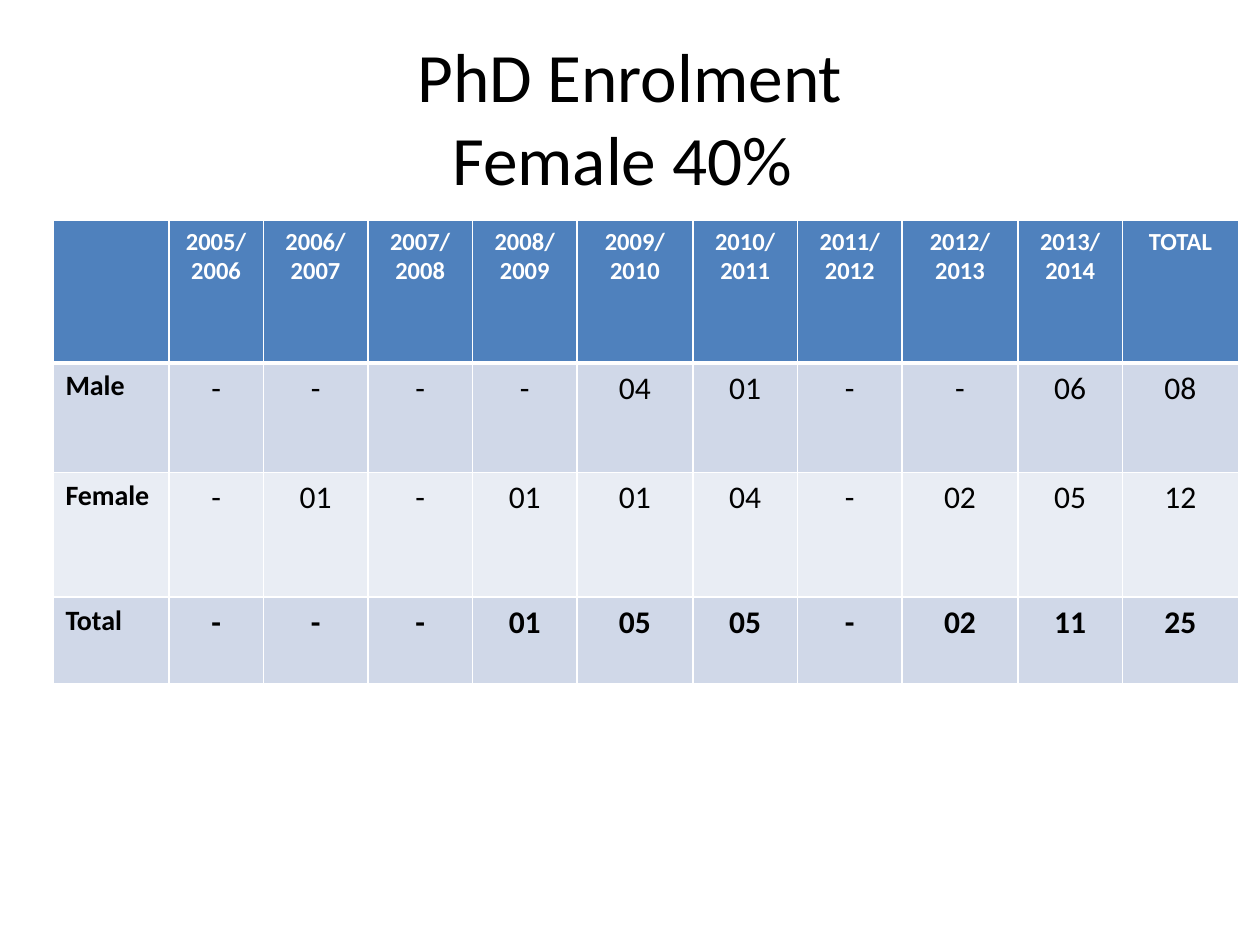
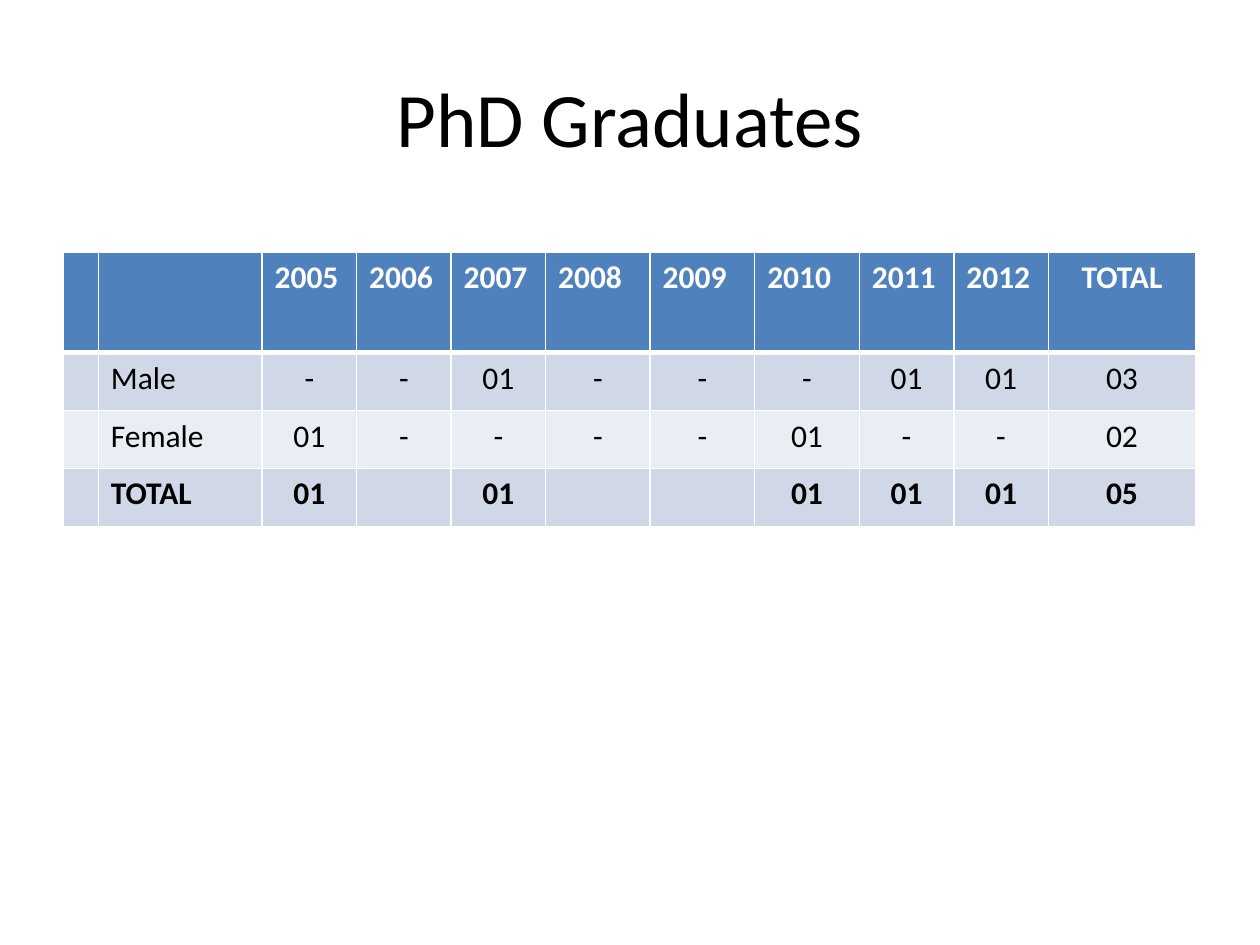
from dataclasses import dataclass

import lxml.etree
import pptx
import pptx.dml.color
import pptx.enum.text
import pptx.oxml.ns
import pptx.util

Inches = pptx.util.Inches
Align = pptx.enum.text.PP_ALIGN

FONT = "Calibri"
BLACK, WHITE = "000000", "FFFFFF"
HEADER_FILL = "4F81BD"
BAND_FILLS = ("D0D8E8", "E9EDF4")
RULE, HEADER_RULE = 1, 3
BODY_SIZE = 18


@dataclass
class StatisticsSlide:
    title: str
    title_size: float
    left: float
    top: float
    column_widths: list[float]
    row_heights: list[float]
    header: list[str]
    rows: list[list[str]]
    label_column: int
    header_size: float
    label_size: float
    bold_labels: bool
    center_years: bool


ENROLMENT = StatisticsSlide(
    title="PhD Enrolment\nFemale 40% ",
    title_size=39.6,
    left=0.42,
    top=1.75,
    column_widths=[0.92, 0.75, 0.83, 0.83, 0.83, 0.92, 0.83, 0.83, 0.92, 0.83, 0.92],
    row_heights=[1.13, 0.87, 0.99, 0.69],
    header=["", *(f"{year}/ {year + 1}" for year in range(2005, 2014)), "TOTAL"],
    rows=[
        ["Male", "-", "-", "-", "-", "04", "01", "-", "-", "06", "08"],
        ["Female", "-", "01", "-", "01", "01", "04", "-", "02", "05", "12"],
        ["Total", "-", "-", "-", "01", "05", "05", "-", "02", "11", "25"],
    ],
    label_column=0,
    header_size=14,
    label_size=16,
    bold_labels=True,
    center_years=True,
)

GRADUATES = StatisticsSlide(
    title="PhD Graduates",
    title_size=44,
    left=0.5,
    top=2,
    column_widths=[0.28, 1.3, 0.75, 0.75, 0.75, 0.83, 0.83, 0.83, 0.75, 0.75, 1.17],
    row_heights=[0.8, 0.46, 0.46, 0.46],
    header=["", "", *(str(year) for year in range(2005, 2013)), "TOTAL"],
    rows=[
        ["", "Male", "-", "-", "01", "-", "-", "-", "01", "01", "03"],
        ["", "Female", "01", "-", "-", "-", "-", "01", "-", "-", "02"],
        ["", "TOTAL", "01", "", "01", "", "", "01", "01", "01", "05"],
    ],
    label_column=1,
    header_size=18,
    label_size=18,
    bold_labels=False,
    center_years=False,
)


def color(value: str) -> pptx.dml.color.RGBColor:
    return pptx.dml.color.RGBColor.from_string(value)


def write(frame, *paragraphs: str, size: float, ink: str = BLACK,
          bold: bool = False, align: Align = Align.CENTER) -> None:
    """Fill a text frame; a newline inside a paragraph is a line break."""
    for index, text in enumerate(paragraphs):
        para = frame.add_paragraph() if index else frame.paragraphs[0]
        para.text = text
        para.alignment = align
        for span in para.runs:
            span.font.name = FONT
            span.font.size = pptx.util.Pt(size)
            span.font.bold = bold
            span.font.color.rgb = color(ink)


def add_title(page, text: str, size: float) -> None:
    box = page.shapes.add_textbox(Inches(0.5), Inches(0.3), Inches(9), Inches(1.25))
    box.text_frame.word_wrap = True
    box.text_frame.vertical_anchor = pptx.enum.text.MSO_ANCHOR.MIDDLE
    write(box.text_frame, text, size=size)


def style_cell(cell, fill: str, top: float, bottom: float) -> None:
    """Give a cell white rules (widths in points) and a solid fill."""
    qualified = pptx.oxml.ns.qn
    properties = cell._tc.get_or_add_tcPr()
    for side, width in {"L": RULE, "R": RULE, "T": top, "B": bottom}.items():
        line = lxml.etree.SubElement(properties, qualified(f"a:ln{side}"),
                                     w=str(pptx.util.Pt(width)))
        solid = lxml.etree.SubElement(line, qualified("a:solidFill"))
        lxml.etree.SubElement(solid, qualified("a:srgbClr"), val=WHITE)
    cell.fill.solid()
    cell.fill.fore_color.rgb = color(fill)


def write_header(cell, content: StatisticsSlide, text: str) -> None:
    centered = content.center_years or text == "TOTAL"
    write(cell.text_frame, *text.split(" "), size=content.header_size, ink=WHITE,
          bold=True, align=Align.CENTER if centered else Align.LEFT)


def write_body(cell, content: StatisticsSlide, text: str,
               is_label: bool, is_total: bool) -> None:
    write(cell.text_frame, text,
          size=content.label_size if is_label else BODY_SIZE,
          bold=is_total or (is_label and content.bold_labels),
          align=Align.LEFT if is_label else Align.CENTER)


def add_statistics_table(page, content: StatisticsSlide) -> None:
    rows = [content.header, *content.rows]
    table = page.shapes.add_table(
        len(rows), len(content.header), Inches(content.left), Inches(content.top),
        Inches(sum(content.column_widths)), Inches(sum(content.row_heights))).table
    table.first_row = table.horz_banding = False
    for column, width in zip(table.columns, content.column_widths):
        column.width = Inches(width)
    for row, height in zip(table.rows, content.row_heights):
        row.height = Inches(height)

    for row_index, texts in enumerate(rows):
        is_header = row_index == 0
        fill = HEADER_FILL if is_header else BAND_FILLS[(row_index - 1) % 2]
        for column_index, text in enumerate(texts):
            cell = table.cell(row_index, column_index)
            style_cell(cell, fill,
                       top=HEADER_RULE if row_index == 1 else RULE,
                       bottom=HEADER_RULE if is_header else RULE)
            if is_header:
                write_header(cell, content, text)
            else:
                write_body(cell, content, text,
                           is_label=column_index == content.label_column,
                           is_total=row_index == len(rows) - 1)


def main() -> None:
    deck = pptx.Presentation()
    deck.slide_width, deck.slide_height = Inches(10), Inches(7.5)
    for content in (ENROLMENT, GRADUATES):
        page = deck.slides.add_slide(deck.slide_layouts[6])
        add_title(page, content.title, content.title_size)
        add_statistics_table(page, content)
    deck.save("out.pptx")


if __name__ == "__main__":
    main()
